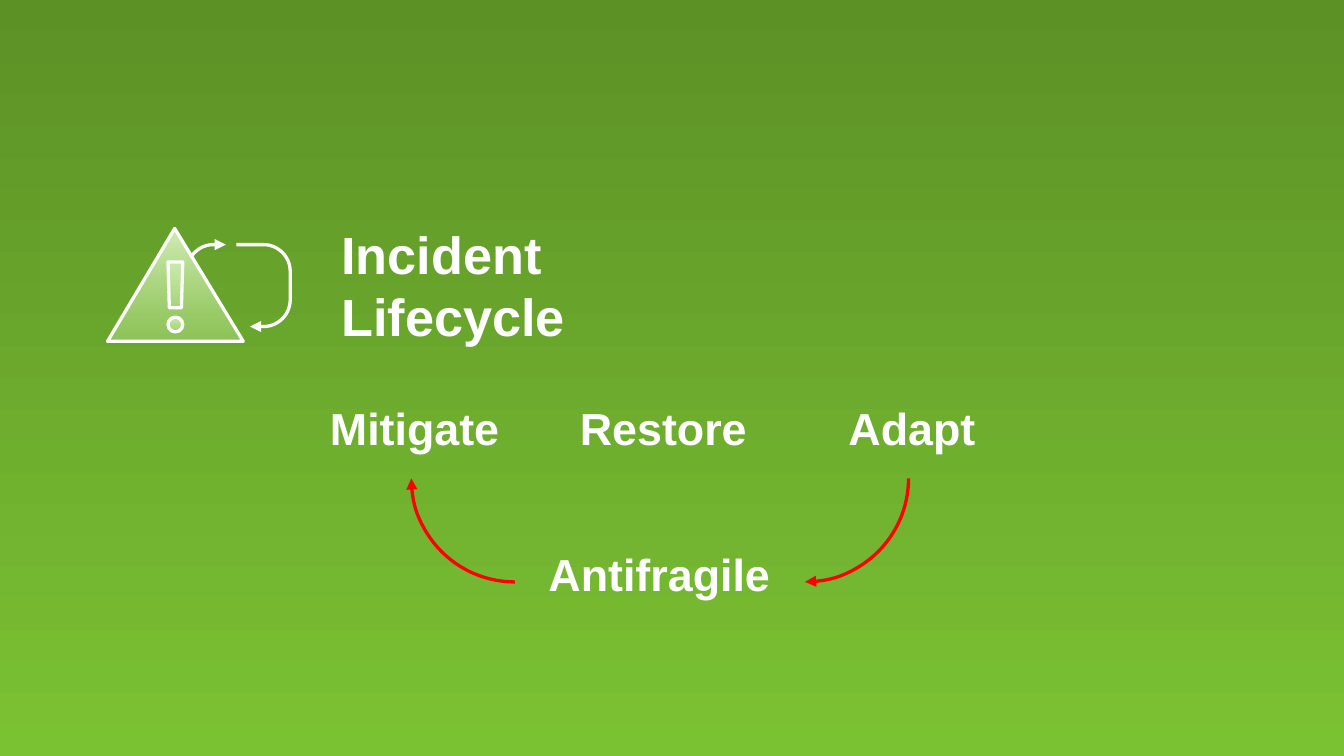
from math import cos, radians, sin

from lxml.etree import SubElement
from pptx import Presentation
from pptx.dml.color import RGBColor
from pptx.enum.shapes import MSO_SHAPE
from pptx.enum.text import MSO_ANCHOR, PP_ALIGN
from pptx.oxml.ns import qn
from pptx.util import Inches, Pt

COLORS = {
    "top": "5C9126",
    "base": "7BC233",
    "pale": "CAE9AB",
    "leaf": "B0DE81",
    "white": "FFFFFF",
    "red": "FF0000",
}


def color(name):
    return RGBColor.from_string(COLORS[name])


def blend(fill, first, last, start=0):
    """Fill from top to bottom with two colours."""
    fill.gradient()
    fill.gradient_angle = 270
    stops = fill.gradient_stops
    stops[0].position = start
    for stop, name in zip(stops, (first, last)):
        stop.color.rgb = color(name)


def stroke(shape, name, arrow=False):
    shape.shadow.inherit = False
    shape.line.color.rgb = color(name)
    shape.line.width = Pt(1.75)
    line = shape.line._get_or_add_ln()
    SubElement(line, qn("a:round"))
    if arrow:
        SubElement(line, qn("a:tailEnd"), type="triangle")


def glaze(shape):
    """Give a part of the sign its half-clear gradient and white edge."""
    blend(shape.fill, "pale", "leaf", 0.1)
    last = shape._element.spPr.findall(".//" + qn("a:srgbClr"))[-1]
    SubElement(last, qn("a:alpha"), val="50000")
    stroke(shape, "white")


def outline(shapes, x, y, points, close):
    spots = [(Inches(x + dx), Inches(y + dy)) for dx, dy in points]
    pen = shapes.build_freeform(*spots[0])
    pen.add_line_segments(spots[1:], close=close)
    return pen.convert_to_shape()


def bend(x, y, radius, start, end):
    """Return points along a circle, with angles clockwise from the right."""
    steps = 16
    turns = [radians(start + (end - start) * i / steps) for i in range(steps + 1)]
    return [(x + radius * cos(t), y + radius * sin(t)) for t in turns]


def write(frame, text, size, align):
    frame.text = text
    frame.word_wrap = True
    for para in frame.paragraphs:
        para.alignment = align
        for run in para.runs:
            run.font.name = "Arial"
            run.font.size = Pt(size)
            run.font.bold = True
            run.font.color.rgb = color("white")


def add_title(slide, x, y, width, height):
    title = slide.shapes.title
    title.left, title.top = Inches(x), Inches(y)
    title.width, title.height = Inches(width), Inches(height)
    frame = title.text_frame
    write(frame, "Incident\vLifecycle", 28, PP_ALIGN.LEFT)
    frame.vertical_anchor = MSO_ANCHOR.TOP
    frame.paragraphs[0].line_spacing = 1


def add_icon(slide, x, y):
    """Draw a warning sign with a loop of arrows to its right."""
    shapes = slide.shapes.add_group_shape().shapes
    sign = [(0, 0.84), (0.5, 0), (1.01, 0.84)]
    mark = [(0.45, 0.25), (0.56, 0.25), (0.55, 0.59), (0.46, 0.59)]
    for points in (sign, mark):
        glaze(outline(shapes, x, y, points, True))
    dot = shapes.add_shape(MSO_SHAPE.OVAL, Inches(x + 0.45), Inches(y + 0.66),
                           Inches(0.11), Inches(0.11))
    glaze(dot)

    hook = bend(0.79, 0.32, 0.2, 213, 270) + [(0.88, 0.12)]
    loop = [(0.96, 0.12), *bend(1.16, 0.32, 0.2, -90, 0),
            *bend(1.16, 0.53, 0.2, 0, 90), (1.06, 0.73)]
    for points in (hook, loop):
        arrow = outline(shapes, x, y, points, False)
        arrow.fill.background()
        stroke(arrow, "white", arrow=True)


def add_label(slide, x, y, text):
    box = slide.shapes.add_textbox(Inches(x), Inches(y), Inches(2.05), Inches(0.62))
    write(box.text_frame, text, 24, PP_ALIGN.CENTER)


def add_cycle(slide, x, y):
    """Place three stages and the red arcs that lead back to the first."""
    labels = [(0, 0, "Mitigate"), (1.85, 0, "Restore"),
              (3.7, 0, "Adapt"), (1.82, 1.09, "Antifragile")]
    for dx, dy, text in labels:
        add_label(slide, x + dx, y + dy, text)
    for dx, turn in ((3.16, 90), (1, 180)):
        arc = slide.shapes.add_shape(MSO_SHAPE.ARC, Inches(x + dx), Inches(y - 0.14),
                                     Inches(1.54), Inches(1.54))
        arc.rotation = turn
        arc.fill.background()
        stroke(arc, "red", arrow=True)


def main():
    deck = Presentation()
    deck.slide_width = Inches(10)
    deck.slide_height = deck.slide_width * 9 // 16
    slide = deck.slides.add_slide(deck.slide_layouts[5])
    blend(slide.background.fill, "top", "base")
    add_title(slide, 2.44, 1.6, 2.13, 1.05)
    add_icon(slide, 0.8, 1.7)
    add_cycle(slide, 2.06, 2.93)
    deck.save("out.pptx")


if __name__ == "__main__":
    main()
